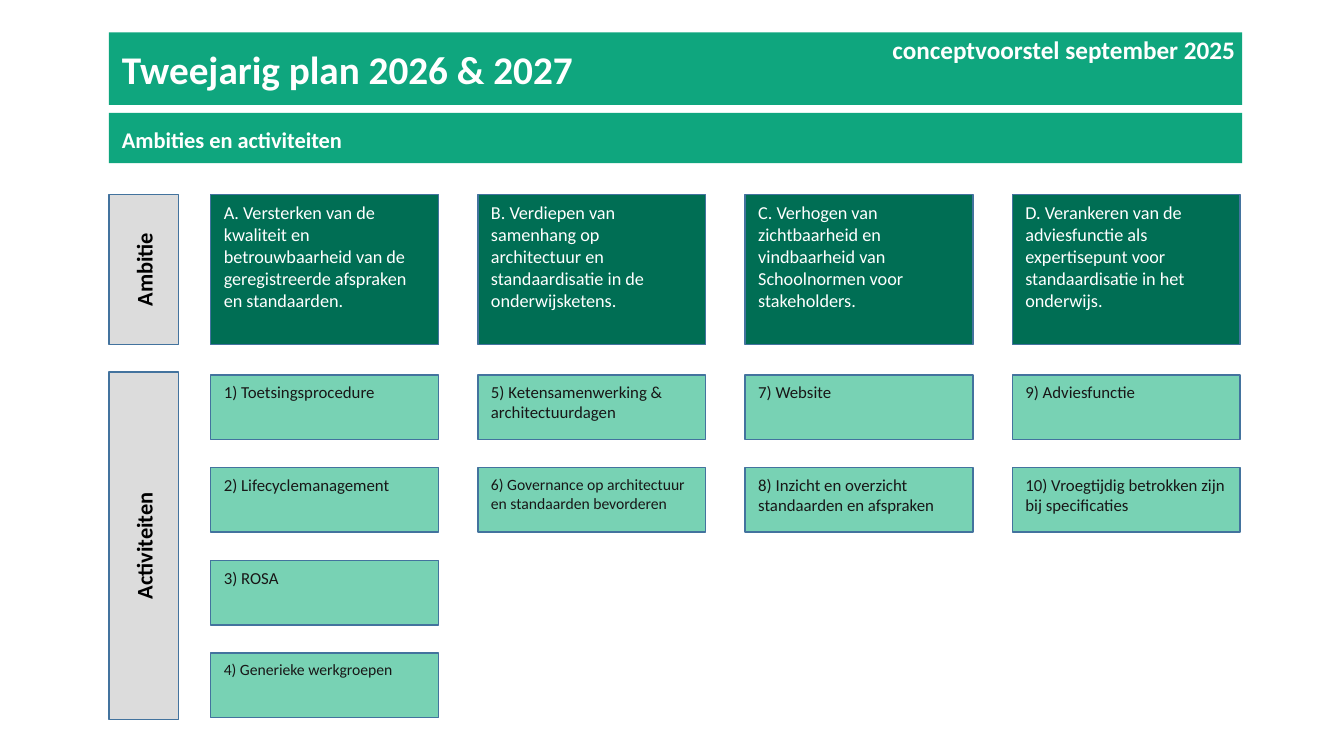
"""Builds the slide with the two-year plan: ambitions and their activities."""
import dataclasses

import pptx
import pptx.dml.color
import pptx.enum.shapes
import pptx.enum.text
import pptx.util

Inches = pptx.util.Inches
ANCHOR = pptx.enum.text.MSO_ANCHOR
ALIGN = pptx.enum.text.PP_ALIGN


@dataclasses.dataclass(frozen=True)
class Theme:
    font: str = "Calibri"
    banner: str = "0FA67E"
    ambition: str = "006E54"
    activity: str = "78D2B4"
    label: str = "DCDCDC"
    line: str = "43739E"
    white: str = "FFFFFF"
    ink: str = "181717"
    black: str = "000000"
    title_size: float = 28
    note_size: float = 18
    head_size: float = 16
    ambition_size: float = 13
    activity_size: float = 12
    small_size: float = 11.2


class Slide:
    def __init__(self, prs, theme):
        self.theme = theme
        self.s = prs.slides.add_slide(prs.slide_layouts[5])

    def rgb(self, color):
        return pptx.dml.color.RGBColor.from_string(color)

    def set_text(self, sp, text, size, color, bold=False, align=ALIGN.LEFT,
                 anchor=ANCHOR.TOP, insets=(0.1, 0.05, 0.1, 0.05)):
        tf = sp.text_frame
        left, top, right, bottom = map(Inches, insets)
        frame = {"word_wrap": True, "auto_size": pptx.enum.text.MSO_AUTO_SIZE.NONE,
                 "vertical_anchor": anchor, "margin_left": left, "margin_top": top,
                 "margin_right": right, "margin_bottom": bottom}
        p = tf.paragraphs[0]
        r = p.add_run()
        r.text = text
        para = {"alignment": align, "line_spacing": 1.0}
        font = {"name": self.theme.font, "size": pptx.util.Pt(size), "bold": bold}
        for target, values in ((tf, frame), (p, para), (r.font, font)):
            for name, value in values.items():
                setattr(target, name, value)
        r.font.color.rgb = self.rgb(color)

    def box(self, at, fill, outlined=True):
        rect = pptx.enum.shapes.MSO_SHAPE.RECTANGLE
        sp = self.s.shapes.add_shape(rect, *map(Inches, at))
        sp.shadow.inherit = False
        sp.fill.solid()
        sp.fill.fore_color.rgb = self.rgb(fill)
        if outlined:
            sp.line.color.rgb = self.rgb(self.theme.line)
            sp.line.width = pptx.util.Pt(1)
        else:
            sp.line.fill.background()
        return sp

    def title(self, at, text):
        sp = self.s.shapes.title
        sp.left, sp.top, sp.width, sp.height = map(Inches, at)
        sp.fill.solid()
        sp.fill.fore_color.rgb = self.rgb(self.theme.banner)
        self.set_text(sp, text, self.theme.title_size, self.theme.white, True,
                      insets=(0.13,) * 4)

    def banner(self, at, text):
        sp = self.box(at, self.theme.banner, outlined=False)
        self.set_text(sp, text, self.theme.head_size, self.theme.white, True,
                      insets=(0.13,) * 4)

    def note(self, at, text):
        sp = self.s.shapes.add_textbox(*map(Inches, at))
        self.set_text(sp, text, self.theme.note_size, self.theme.white, True, ALIGN.RIGHT)

    def label(self, at, text):
        sp = self.box(at, self.theme.label)
        self.set_text(sp, text, self.theme.head_size, self.theme.black, True,
                      ALIGN.CENTER, ANCHOR.MIDDLE, (0.1, 0.05, 0.05, 0.05))
        sp.text_frame._txBody.bodyPr.set("vert", "vert270")

    def card(self, at, text, fill, size, color):
        sp = self.box(at, fill)
        self.set_text(sp, text, size, color, insets=(0.13, 0.07, 0.14, 0.05))


COLUMNS = [
    ("A. Versterken van de kwaliteit en betrouwbaarheid van de geregistreerde "
     "afspraken en standaarden.",
     ["1) Toetsingsprocedure", "2) Lifecyclemanagement", "3) ROSA",
      "4) Generieke werkgroepen"]),
    ("B. Verdiepen van samenhang op architectuur en standaardisatie in de onderwijsketens.",
     ["5) Ketensamenwerking & architectuurdagen",
      "6) Governance op architectuur en standaarden bevorderen"]),
    ("C. Verhogen van zichtbaarheid en vindbaarheid van Schoolnormen voor stakeholders.",
     ["7) Website", "8) Inzicht en overzicht standaarden en afspraken"]),
    ("D. Verankeren van de adviesfunctie als expertisepunt voor standaardisatie "
     "in het onderwijs.",
     ["9) Adviesfunctie", "10) Vroegtijdig betrokken zijn bij specificaties"]),
]
SMALL = ("4)", "6)")
LEFT, WIDTH = 1.08, 11.24
COL_X, COL_STEP, CARD_W = 2.09, 2.65, 2.26
AMBITION_Y, AMBITION_H = 1.93, 1.49
ROW_Y, ROW_STEP, ROW_H = 3.72, 0.92, 0.64
LABEL_W = 0.69


def main():
    prs = pptx.Presentation()
    prs.slide_width, prs.slide_height = Inches(13.33), Inches(7.5)
    theme = Theme()
    s = Slide(prs, theme)
    s.title((LEFT, 0.32, WIDTH, 0.72), "Tweejarig plan 2026 & 2027")
    s.note((8.53, 0.29, 3.82, 0.4), "conceptvoorstel september 2025")
    s.banner((LEFT, 1.12, WIDTH, 0.5), "Ambities en activiteiten")
    s.label((LEFT, AMBITION_Y, LABEL_W, AMBITION_H), "Ambitie")
    s.label((LEFT, 3.69, LABEL_W, 3.45), "Activiteiten")
    for col, (ambition, activities) in enumerate(COLUMNS):
        x = COL_X + col * COL_STEP
        s.card((x, AMBITION_Y, CARD_W, AMBITION_H), ambition,
               theme.ambition, theme.ambition_size, theme.white)
        for row, activity in enumerate(activities):
            size = theme.small_size if activity.startswith(SMALL) else theme.activity_size
            s.card((x, ROW_Y + row * ROW_STEP, CARD_W, ROW_H), activity,
                   theme.activity, size, theme.ink)
    prs.save("out.pptx")


if __name__ == "__main__":
    main()
